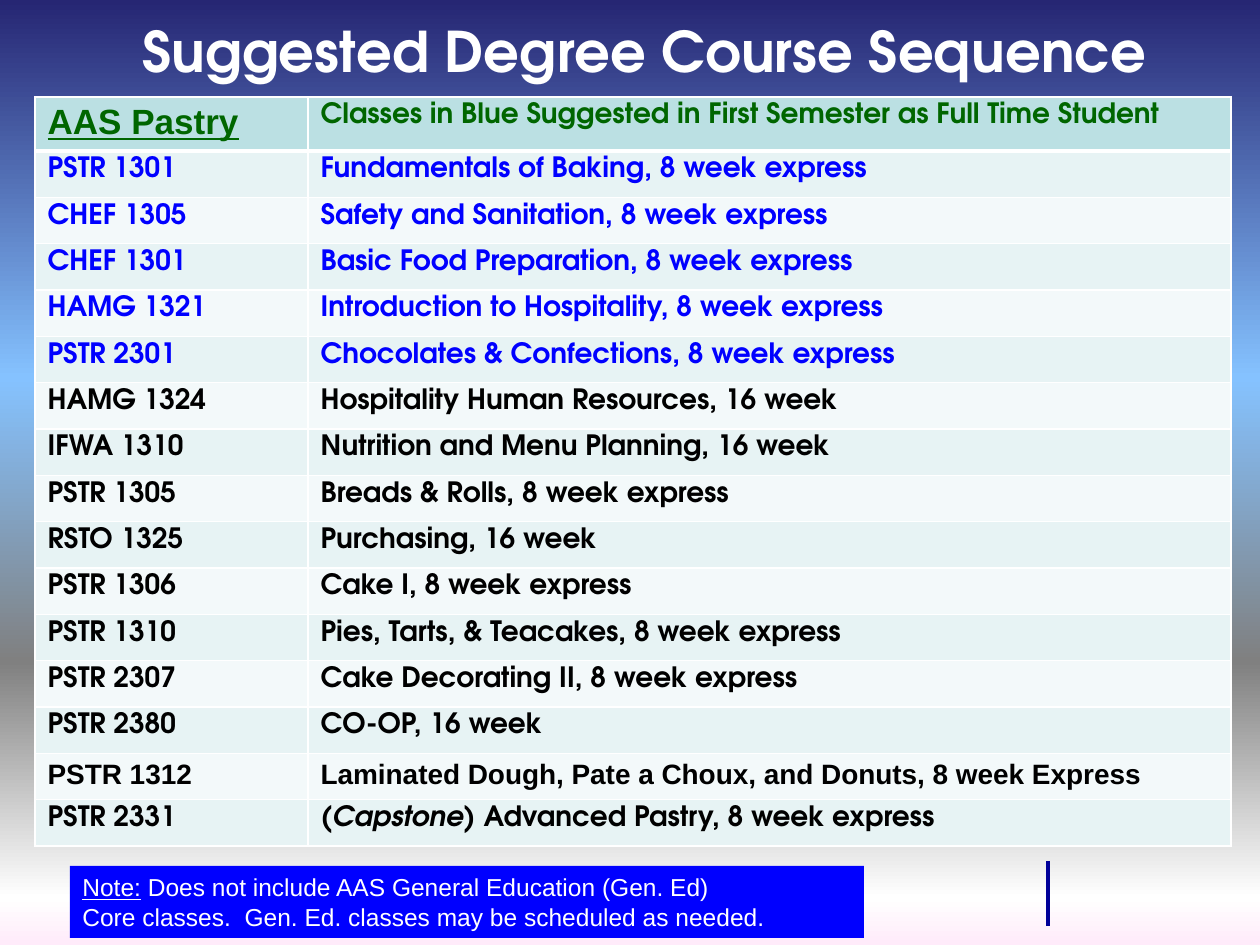
from dataclasses import dataclass

from lxml.etree import SubElement
from pptx import Presentation
from pptx.dml.color import RGBColor
from pptx.enum.shapes import MSO_CONNECTOR, MSO_SHAPE
from pptx.enum.text import MSO_ANCHOR, PP_ALIGN
from pptx.oxml import parse_xml
from pptx.oxml.ns import nsdecls, qn
from pptx.util import Emu, Pt

PX_PER_INCH = 126


@dataclass(frozen=True)
class Theme:
    display: str = "TeX Gyre Adventor"
    body: str = "Arial"
    title_size: int = 32
    heading_size: int = 20
    course_size: int = 16
    note_size: int = 14
    white: str = "FFFFFF"
    black: str = "000000"
    blue: str = "0000FF"
    green: str = "006600"
    accent: str = "000099"
    header_fill: str = "BBE0E3"
    band_fills: tuple = ("E7F3F4", "F3F9FA")
    sky: tuple = ((0, "262673"), (40, "85C2FF"), (70, "808080"),
                  (95, "FFFFFF"), (100, "FFEBFA"))


THEME = Theme()

FIRST_SEMESTER = [
    ("PSTR 1301", "Fundamentals of Baking, 8 week express"),
    ("CHEF 1305", "Safety and Sanitation, 8 week express"),
    ("CHEF 1301", "Basic Food Preparation, 8 week express"),
    ("HAMG 1321", "Introduction to Hospitality, 8 week express"),
    ("PSTR 2301", "Chocolates & Confections, 8 week express"),
]
LATER_COURSES = [
    ("HAMG 1324", "Hospitality Human Resources, 16 week"),
    ("IFWA 1310", "Nutrition and Menu Planning, 16 week"),
    ("PSTR 1305", "Breads & Rolls, 8 week express"),
    ("RSTO 1325", "Purchasing, 16 week"),
    ("PSTR 1306", "Cake I, 8 week express"),
    ("PSTR 1310", "Pies, Tarts, & Teacakes, 8 week express"),
    ("PSTR 2307", "Cake Decorating II, 8 week express"),
    ("PSTR 2380", "CO-OP, 16 week"),
    ("PSTR 1312", "Laminated Dough, Pate a Choux, and Donuts, 8 week Express"),
    ("PSTR 2331", "Advanced Pastry, 8 week express"),
]
BODY_FONT_COURSES = {"PSTR 1312"}
ITALIC_PREFIXES = {"PSTR 2331": "(Capstone) "}


def px(length):
    return Emu(round(length * 914400 / PX_PER_INCH))


def add_run(paragraph, text, color, **formats):
    run = paragraph.add_run()
    run.text = text
    run.font.color.rgb = RGBColor.from_string(color)
    for name, value in formats.items():
        setattr(run.font, name, value)


def paint_background(slide):
    fill = slide.background.fill
    fill.gradient()
    fill.gradient_angle = 270
    stops = slide.background._cSld.find(".//" + qn("a:gsLst"))
    for stop in list(stops):
        stops.remove(stop)
    for percent, color in THEME.sky:
        stop = SubElement(stops, qn("a:gs"), pos=str(percent * 1000))
        SubElement(stop, qn("a:srgbClr"), val=color)


def place_title(slide, left, top, width, height):
    title = slide.shapes.title
    title.left, title.top, title.width, title.height = map(px, (left, top, width, height))
    title.text_frame.vertical_anchor = MSO_ANCHOR.MIDDLE
    paragraph = title.text_frame.paragraphs[0]
    paragraph.alignment = PP_ALIGN.CENTER
    add_run(paragraph, "Suggested Degree Course Sequence", THEME.white,
            name=THEME.display, size=Pt(THEME.title_size), bold=True)


def format_cell(cell, fill, bottom_width=1):
    cell.fill.solid()
    cell.fill.fore_color.rgb = RGBColor.from_string(fill)
    properties = cell._tc.get_or_add_tcPr()
    widths = {"lnL": 1, "lnR": 1, "lnT": 1, "lnB": bottom_width}
    for index, (edge, width) in enumerate(widths.items()):
        properties.insert(index, parse_xml(
            f'<a:{edge} {nsdecls("a")} w="{Pt(width)}"><a:solidFill>'
            f'<a:srgbClr val="{THEME.white}"/></a:solidFill></a:{edge}>'))


def fill_header(table):
    headings = [
        ("AAS Pastry", {"name": THEME.body, "size": Pt(THEME.heading_size), "underline": True}),
        ("Classes in Blue Suggested in First Semester as Full Time Student",
         {"name": THEME.display, "size": Pt(THEME.course_size)}),
    ]
    for column, (text, formats) in enumerate(headings):
        cell = table.cell(0, column)
        format_cell(cell, THEME.header_fill, bottom_width=3)
        add_run(cell.text_frame.paragraphs[0], text, THEME.green, bold=True, **formats)


def fill_course(table, row, course, color):
    code, description = course
    formats = {"name": THEME.body if code in BODY_FONT_COURSES else THEME.display,
               "size": Pt(THEME.course_size), "bold": True}
    for column, text in enumerate((code, description)):
        cell = table.cell(row, column)
        format_cell(cell, THEME.band_fills[(row - 1) % 2])
        paragraph = cell.text_frame.paragraphs[0]
        if column == 1 and code in ITALIC_PREFIXES:
            add_run(paragraph, ITALIC_PREFIXES[code], color, italic=True, **formats)
        add_run(paragraph, text, color, **formats)


def add_course_table(slide, left, top, width, height):
    courses = FIRST_SEMESTER + LATER_COURSES
    code_width, header_height = 273, 54
    frame = slide.shapes.add_table(len(courses) + 1, 2, *map(px, (left, top, width, height)))
    table = frame.table
    table.first_row = table.horz_banding = False
    table.columns[0].width = px(code_width)
    table.columns[1].width = px(width - code_width)
    table.rows[0].height = px(header_height)
    fill_header(table)
    for row, course in enumerate(courses, start=1):
        table.rows[row].height = px((height - header_height) / len(courses))
        color = THEME.blue if row <= len(FIRST_SEMESTER) else THEME.black
        fill_course(table, row, course, color)


def add_note(slide, left, top, width, height):
    shape = slide.shapes.add_shape(MSO_SHAPE.RECTANGLE, *map(px, (left, top, width, height)))
    shape.shadow.inherit = False
    shape.fill.solid()
    shape.fill.fore_color.rgb = RGBColor.from_string(THEME.blue)
    shape.line.fill.background()
    frame = shape.text_frame
    frame.word_wrap = True
    frame.vertical_anchor = MSO_ANCHOR.TOP
    formats = {"name": THEME.body, "size": Pt(THEME.note_size)}
    first, second = frame.paragraphs[0], frame.add_paragraph()
    first.alignment = second.alignment = PP_ALIGN.LEFT
    add_run(first, "Note:", THEME.white, underline=True, **formats)
    add_run(first, " Does not include AAS General Education (Gen. Ed)", THEME.white, **formats)
    add_run(second, "Core classes.  Gen. Ed. classes may be scheduled as needed.",
            THEME.white, **formats)


def add_footer_rule(slide, left, top, height):
    rule = slide.shapes.add_connector(
        MSO_CONNECTOR.STRAIGHT, *map(px, (left, top, left, top + height)))
    rule.line.color.rgb = RGBColor.from_string(THEME.accent)
    rule.line.width = Pt(2.25)
    SubElement(rule._element.spPr, qn("a:effectLst"))


def main():
    presentation = Presentation()
    presentation.slide_width, presentation.slide_height = px(1260), px(945)
    slide = presentation.slides.add_slide(presentation.slide_layouts[5])
    paint_background(slide)
    add_footer_rule(slide, 1048, 861, 65)
    place_title(slide, 78, -29, 1134, 158)
    add_note(slide, 70, 866, 794, 72)
    add_course_table(slide, 35, 97, 1196, 749)
    presentation.save("out.pptx")


if __name__ == "__main__":
    main()
